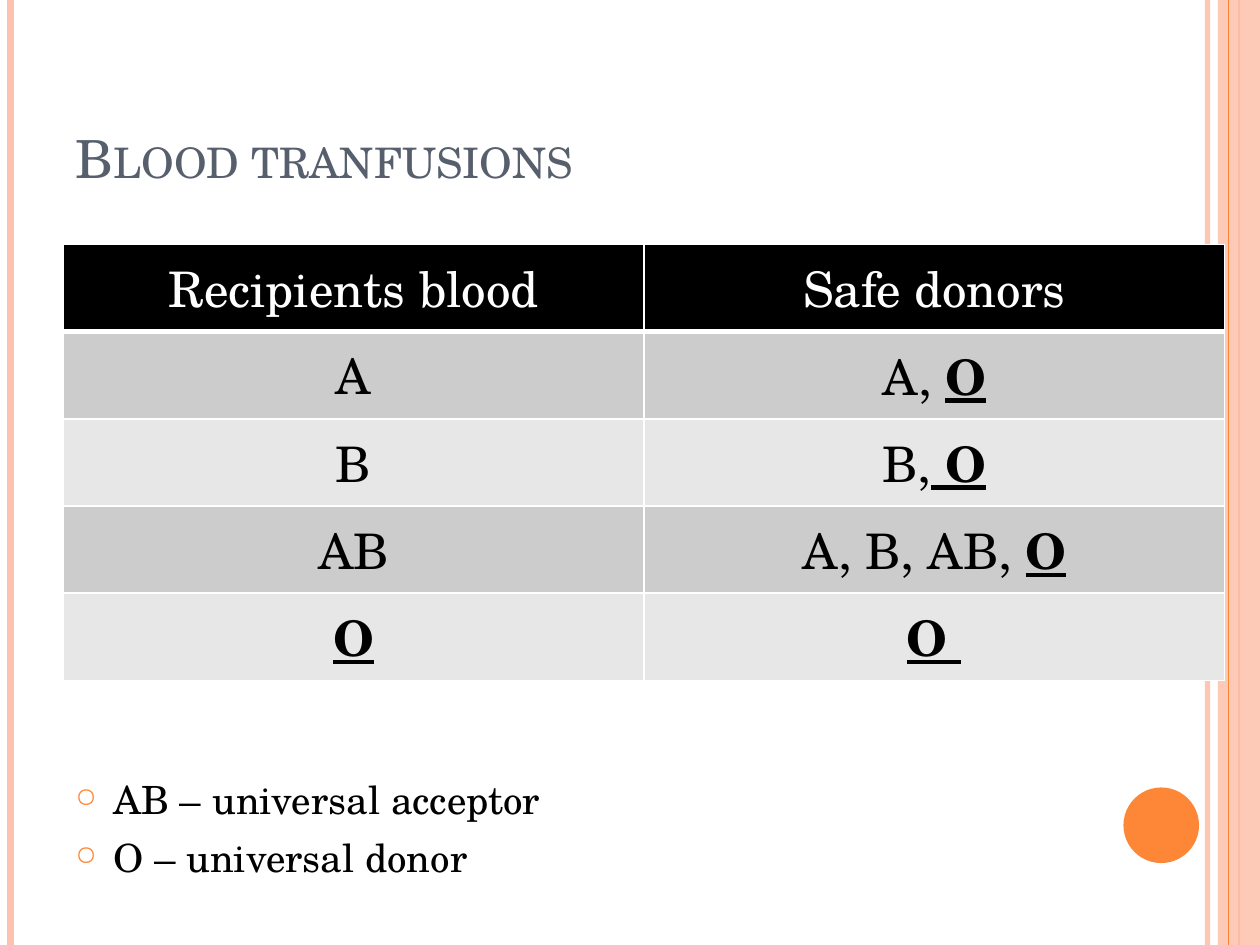
import dataclasses

import pptx
import pptx.dml.color
import pptx.enum.shapes
import pptx.enum.text
import pptx.oxml
import pptx.oxml.ns
import pptx.util
from lxml import etree

Pt = pptx.util.Pt
qn = pptx.oxml.ns.qn


@dataclasses.dataclass(frozen=True)
class Theme:
    """Colours, font and type sizes of the slide."""
    font: str = "TeX Gyre Schola"
    title_size: float = 30
    table_size: float = 28
    note_size: float = 22.2
    slate: str = "575F6D"
    black: str = "000000"
    white: str = "FFFFFF"
    orange: str = "FE8637"
    peach: str = "FEC3AE"
    bands: tuple = ("CCCCCC", "E7E7E7")


THEME = Theme()
WIDTH, HEIGHT = 720, 540
HEADINGS = ("Recipients blood", "Safe donors")
MATCHES = (
    (("A", ""), ("A, ", "O")),
    (("B", ""), ("B,", " O")),
    (("AB", ""), ("A, B, AB, ", "O")),
    (("", "O"), ("", "O ")),
)
NOTES = ("AB – universal acceptor", "O – universal donor")


def rgb(colour):
    """Turn a hex string into a colour."""
    return pptx.dml.color.RGBColor.from_string(colour)


def add_child(parent, tag, **attributes):
    """Append a DrawingML element and return it."""
    return etree.SubElement(parent, qn(tag), attributes)


def set_alpha(element, percent):
    """Make the first solid colour inside an element partly transparent."""
    colour = next(element.iter(qn("a:srgbClr")))
    add_child(colour, "a:alpha", val=str(percent * 1000))


def write(paragraph, text, size, colour=THEME.black, strong=False, small_caps=False):
    """Add a formatted run to a paragraph."""
    run = paragraph.add_run()
    run.text = text
    run.font.name = THEME.font
    run.font.size = Pt(size)
    run.font.color.rgb = rgb(colour)
    run.font.bold = run.font.underline = strong
    if small_caps:
        run.font._element.set("cap", "small")


def add_rule(slide, x, colour, weight, opacity=100):
    """Draw a full-height vertical line."""
    rule = slide.shapes.add_connector(
        pptx.enum.shapes.MSO_CONNECTOR.STRAIGHT, Pt(x), Pt(0), Pt(x), Pt(HEIGHT))
    rule.line.color.rgb = rgb(colour)
    rule.line.width = Pt(weight)
    properties = rule._element.spPr
    if opacity < 100:
        set_alpha(properties, opacity)
    add_child(properties, "a:effectLst")


def add_block(slide, kind, left, top, width, height, colour, opacity=100):
    """Draw a plain filled shape."""
    block = slide.shapes.add_shape(kind, Pt(left), Pt(top), Pt(width), Pt(height))
    block.shadow.inherit = False
    block.fill.solid()
    block.fill.fore_color.rgb = rgb(colour)
    block.line.fill.background()
    if opacity < 100:
        set_alpha(block._element.spPr, opacity)


def add_text_frame(slide, left, top, width, height, anchor):
    """Add a wrapping text box and return its frame."""
    frame = slide.shapes.add_textbox(Pt(left), Pt(top), Pt(width), Pt(height)).text_frame
    frame.word_wrap = True
    frame.vertical_anchor = anchor
    return frame


def add_bullet(paragraph):
    """Give a paragraph a hanging ring bullet."""
    properties = paragraph._p.get_or_add_pPr()
    indent = Pt(21.6)
    properties.set("marL", str(indent))
    properties.set("indent", str(-indent))
    add_child(add_child(properties, "a:buClr"), "a:srgbClr", val=THEME.orange)
    add_child(properties, "a:buSzPct", val="70000")
    add_child(properties, "a:buChar", char="○")


def format_cell(cell, fill, bottom=1):
    """Set the fill, white borders and centring of a cell."""
    properties = cell._tc.get_or_add_tcPr()
    for side, weight in (("L", 1), ("R", 1), ("T", 1), ("B", bottom)):
        border = add_child(properties, f"a:ln{side}", w=str(Pt(weight)))
        add_child(add_child(border, "a:solidFill"), "a:srgbClr", val=THEME.white)
    cell.fill.solid()
    cell.fill.fore_color.rgb = rgb(fill)
    cell.vertical_anchor = pptx.enum.text.MSO_ANCHOR.MIDDLE
    cell.text_frame.paragraphs[0].alignment = pptx.enum.text.PP_ALIGN.CENTER


def add_donor_table(slide):
    """Add the table of recipients and safe donors."""
    table = slide.shapes.add_table(
        len(MATCHES) + 1, len(HEADINGS), Pt(36), Pt(139.68), Pt(663.84), Pt(249.12)).table
    for column, heading in enumerate(HEADINGS):
        cell = table.cell(0, column)
        format_cell(cell, THEME.black, bottom=3)
        write(cell.text_frame.paragraphs[0], heading, THEME.table_size, THEME.white)
    for row, match in enumerate(MATCHES, start=1):
        for column, (plain, universal) in enumerate(match):
            cell = table.cell(row, column)
            format_cell(cell, THEME.bands[(row - 1) % 2])
            for text, strong in ((plain, False), (universal, True)):
                if text:
                    write(cell.text_frame.paragraphs[0], text, THEME.table_size, strong=strong)


def add_decoration(slide):
    """Draw the edge stripes and the disc."""
    shapes = pptx.enum.shapes.MSO_SHAPE
    add_rule(slide, 690, THEME.peach, 3, opacity=93)
    add_rule(slide, 6, THEME.peach, 4.5)
    add_rule(slide, 708, THEME.orange, 1.5)
    add_block(slide, shapes.RECTANGLE, 696, 0, 24, HEIGHT, THEME.peach, opacity=87)
    add_rule(slide, 702, THEME.orange, 0.75)
    add_block(slide, shapes.OVAL, 642, 450, 43.2, 43.2, THEME.orange)


def add_title(slide):
    """Add the slide title."""
    frame = add_text_frame(slide, 36, 21.6, 588, 90, pptx.enum.text.MSO_ANCHOR.BOTTOM)
    write(frame.paragraphs[0], "Blood tranfusions", THEME.title_size, THEME.slate,
          small_caps=True)


def add_notes(slide):
    """Add the bulleted remarks under the table."""
    frame = add_text_frame(slide, 36, 440, 648, 64, pptx.enum.text.MSO_ANCHOR.TOP)
    for index, note in enumerate(NOTES):
        paragraph = frame.add_paragraph() if index else frame.paragraphs[0]
        paragraph.space_before = Pt(6)
        add_bullet(paragraph)
        write(paragraph, note, THEME.note_size)


def main():
    """Build and save the slide."""
    deck = pptx.Presentation()
    deck.slide_width, deck.slide_height = Pt(WIDTH), Pt(HEIGHT)
    slide = deck.slides.add_slide(deck.slide_layouts[6])
    add_decoration(slide)
    add_title(slide)
    add_notes(slide)
    add_donor_table(slide)
    deck.save("out.pptx")


if __name__ == "__main__":
    main()
